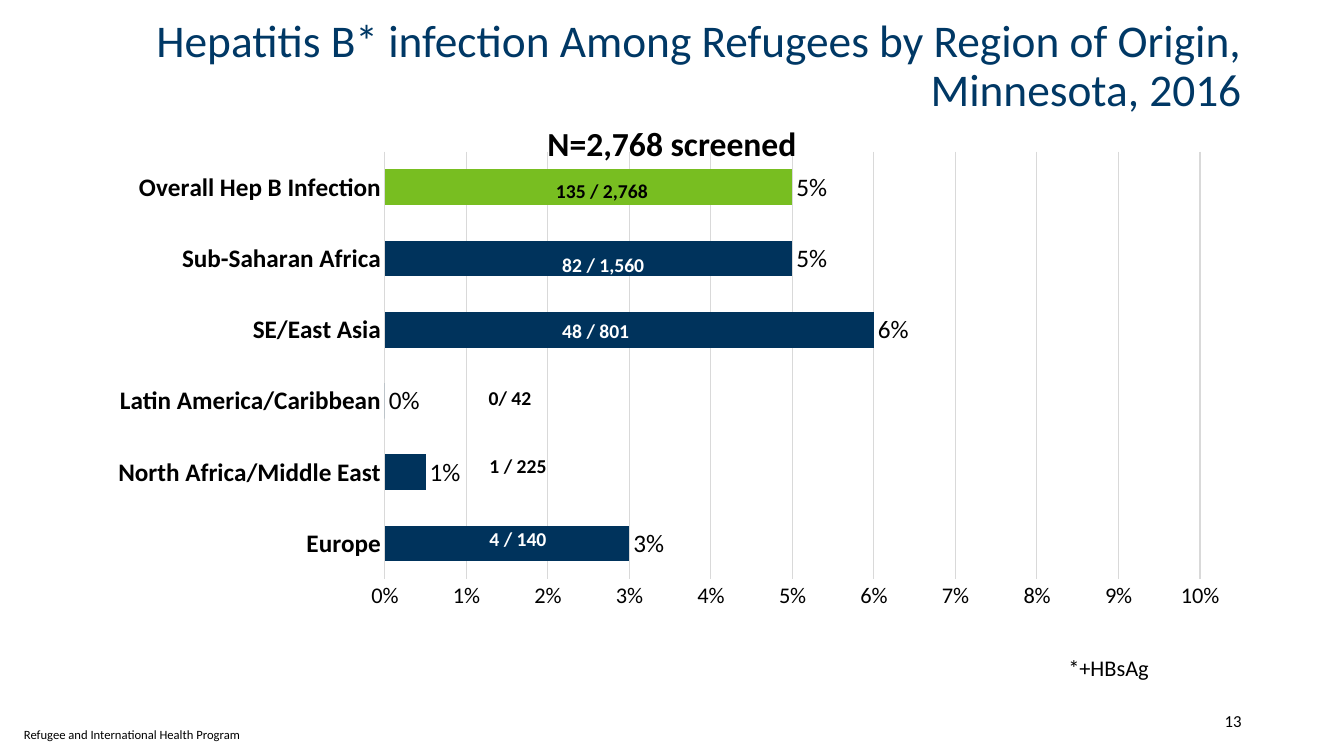
from dataclasses import dataclass

from lxml import etree
from pptx import Presentation
from pptx.chart.data import CategoryChartData
from pptx.dml.color import RGBColor
from pptx.enum.chart import XL_CHART_TYPE as ChartType
from pptx.enum.chart import XL_LABEL_POSITION as LabelPosition
from pptx.enum.chart import XL_TICK_MARK as TickMark
from pptx.enum.text import MSO_ANCHOR as Anchor
from pptx.enum.text import PP_ALIGN as Align
from pptx.oxml.ns import qn
from pptx.slide import Slide
from pptx.text.text import Font
from pptx.util import Pt

FONT = "Calibri"
BLACK = RGBColor(0x00, 0x00, 0x00)
WHITE = RGBColor(0xFF, 0xFF, 0xFF)
TITLE_BLUE = RGBColor(0x00, 0x38, 0x65)
BAR_NAVY = RGBColor(0x00, 0x33, 0x5C)
OVERALL_GREEN = RGBColor(0x78, 0xBE, 0x21)
GRID_GRAY = RGBColor(0xD9, 0xD9, 0xD9)


@dataclass(frozen=True)
class Label:
    text: str
    left: float
    top: float
    width: float
    height: float = 24.5
    size: float = 14
    color: RGBColor = BLACK
    bold: bool = True
    align: Align = Align.LEFT
    anchor: Anchor = Anchor.TOP


@dataclass(frozen=True)
class Region:
    name: str
    rate: float
    color: RGBColor = BAR_NAVY


# Bottom bar first
REGIONS = [
    Region("Europe", 0.03),
    Region("North Africa/Middle East", 0.005),
    Region("Latin America/Caribbean", 0),
    Region("SE/East Asia", 0.06),
    Region("Sub-Saharan Africa", 0.05),
    Region("Overall Hep B Infection", 0.05, OVERALL_GREEN),
]

CAPTIONS = [
    Label("Refugee and International Health Program", 10, 516, 170, 18, 9, bold=False),
    Label("13", 779, 500, 115, 29, 12, bold=False, align=Align.RIGHT, anchor=Anchor.MIDDLE),
    Label("N=2,768 screened", 369, 84, 222, 37, 24, align=Align.CENTER),
    Label("*+HBsAg", 756, 464, 161, 27, 16, bold=False),
]

CASE_COUNTS = [
    Label("135 / 2,768", 390, 124.5, 90),
    Label("82 / 1,560", 394.5, 177, 79, color=WHITE),
    Label("48 / 801", 394.5, 224, 79, color=WHITE),
    Label("0/ 42", 342, 272, 54),
    Label("1 / 225", 342.5, 320.5, 76),
    Label("4 / 140", 342.5, 373, 61, color=WHITE),
]


def style_font(font: Font, size: float, color: RGBColor, bold: bool = False) -> None:
    font.name = FONT
    font.size = Pt(size)
    font.bold = bold
    font.color.rgb = color


def add_label(slide: Slide, label: Label) -> None:
    box = slide.shapes.add_textbox(
        Pt(label.left), Pt(label.top), Pt(label.width), Pt(label.height))
    frame = box.text_frame
    frame.word_wrap = True
    frame.vertical_anchor = label.anchor
    frame.text = label.text
    paragraph = frame.paragraphs[0]
    paragraph.alignment = label.align
    style_font(paragraph.runs[0].font, label.size, label.color, label.bold)


def add_title(slide: Slide, text: str) -> None:
    title = slide.shapes.title
    title.left, title.top, title.width, title.height = Pt(66), Pt(12), Pt(828), Pt(72)
    frame = title.text_frame
    frame.text = text
    frame.word_wrap = True
    frame.vertical_anchor = Anchor.MIDDLE
    paragraph = frame.paragraphs[0]
    paragraph.alignment = Align.RIGHT
    paragraph.line_spacing = 0.9
    style_font(paragraph.runs[0].font, 32.4, TITLE_BLUE)


def add_infection_chart(slide: Slide) -> None:
    data = CategoryChartData(number_format="0%")
    data.categories = [region.name for region in REGIONS]
    data.add_series("Series 1", [region.rate for region in REGIONS])
    chart = slide.shapes.add_chart(
        ChartType.BAR_CLUSTERED, Pt(70), Pt(101.5), Pt(820), Pt(343), data).chart
    chart.has_legend = False
    chart.has_title = False
    style_font(chart.font, 10, TITLE_BLUE)

    # Bars and their percentages
    plot = chart.plots[0]
    plot.gap_width = 100
    plot.vary_by_categories = False
    series = plot.series[0]
    series.format.fill.solid()
    series.format.fill.fore_color.rgb = BAR_NAVY
    for index, region in enumerate(REGIONS):
        if region.color != BAR_NAVY:
            fill = series.points[index].format.fill
            fill.solid()
            fill.fore_color.rgb = region.color
    percentages = series.data_labels
    percentages.show_value = True
    percentages.number_format = "0%"
    percentages.number_format_is_linked = False
    percentages.position = LabelPosition.OUTSIDE_END
    style_font(percentages.font, 18, BLACK)

    # Axes
    region_axis, rate_axis = chart.category_axis, chart.value_axis
    for axis in (region_axis, rate_axis):
        axis.major_tick_mark = TickMark.NONE
        axis.minor_tick_mark = TickMark.NONE
    style_font(region_axis.tick_labels.font, 18, BLACK, bold=True)
    style_font(rate_axis.tick_labels.font, 16, BLACK)
    rate_axis.minimum_scale, rate_axis.maximum_scale = 0, 0.1
    rate_axis.major_unit = 0.01
    rate_axis.tick_labels.number_format = "0%"
    rate_axis.tick_labels.number_format_is_linked = False
    rate_axis.format.line.fill.background()
    rate_axis.has_major_gridlines = True
    for line in (region_axis.format.line, rate_axis.major_gridlines.format.line):
        line.color.rgb = GRID_GRAY
        line.width = Pt(0.75)

    # Plot area as shares of the chart frame
    plot_area = chart.element.find(".//" + qn("c:plotArea"))
    layout = plot_area.find(qn("c:layout"))
    if layout is None:
        layout = etree.Element(qn("c:layout"))
        plot_area.insert(0, layout)
    manual = etree.SubElement(layout, qn("c:manualLayout"))
    settings = {"layoutTarget": "inner", "xMode": "edge", "yMode": "edge",
                "x": 0.25, "y": 0.02, "w": 0.71, "h": 0.89}
    for tag, value in settings.items():
        etree.SubElement(manual, qn(f"c:{tag}")).set("val", str(value))


def main() -> None:
    deck = Presentation()
    deck.slide_width, deck.slide_height = Pt(960), Pt(540)
    slide = deck.slides.add_slide(deck.slide_layouts[5])
    add_title(slide, "Hepatitis B* infection Among Refugees by Region of Origin, Minnesota, 2016")
    add_infection_chart(slide)
    for label in CAPTIONS + CASE_COUNTS:
        add_label(slide, label)
    deck.save("out.pptx")


if __name__ == "__main__":
    main()
